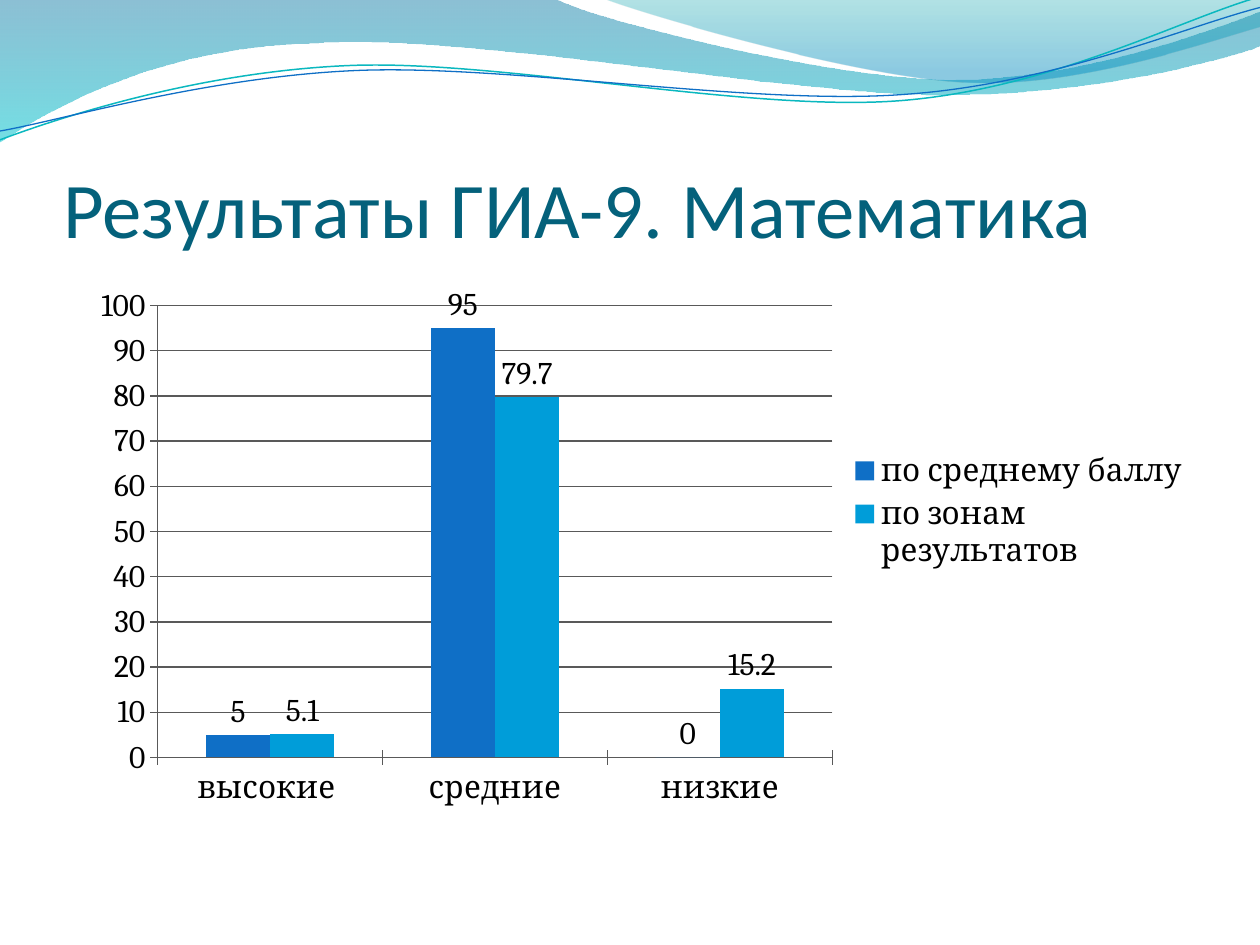
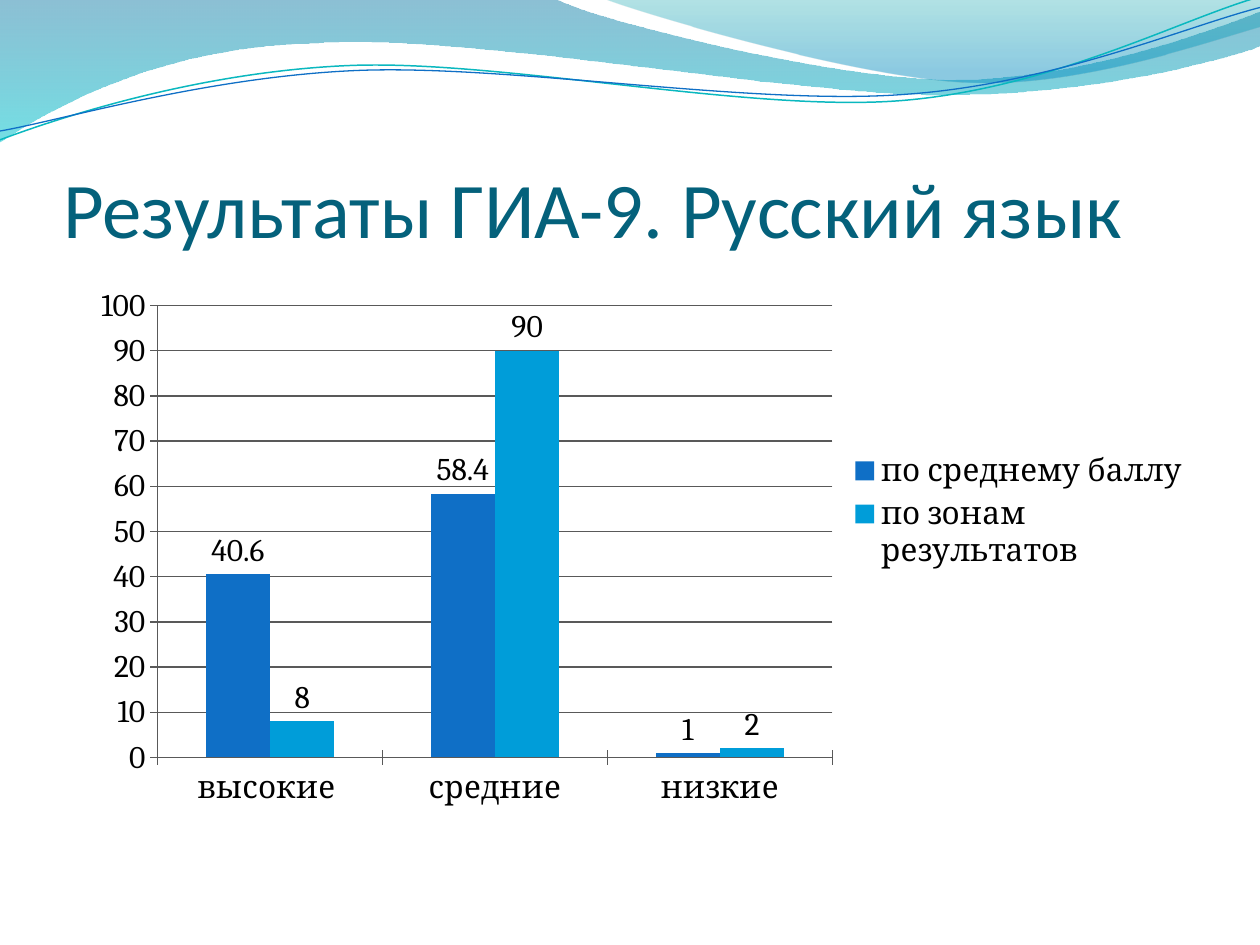
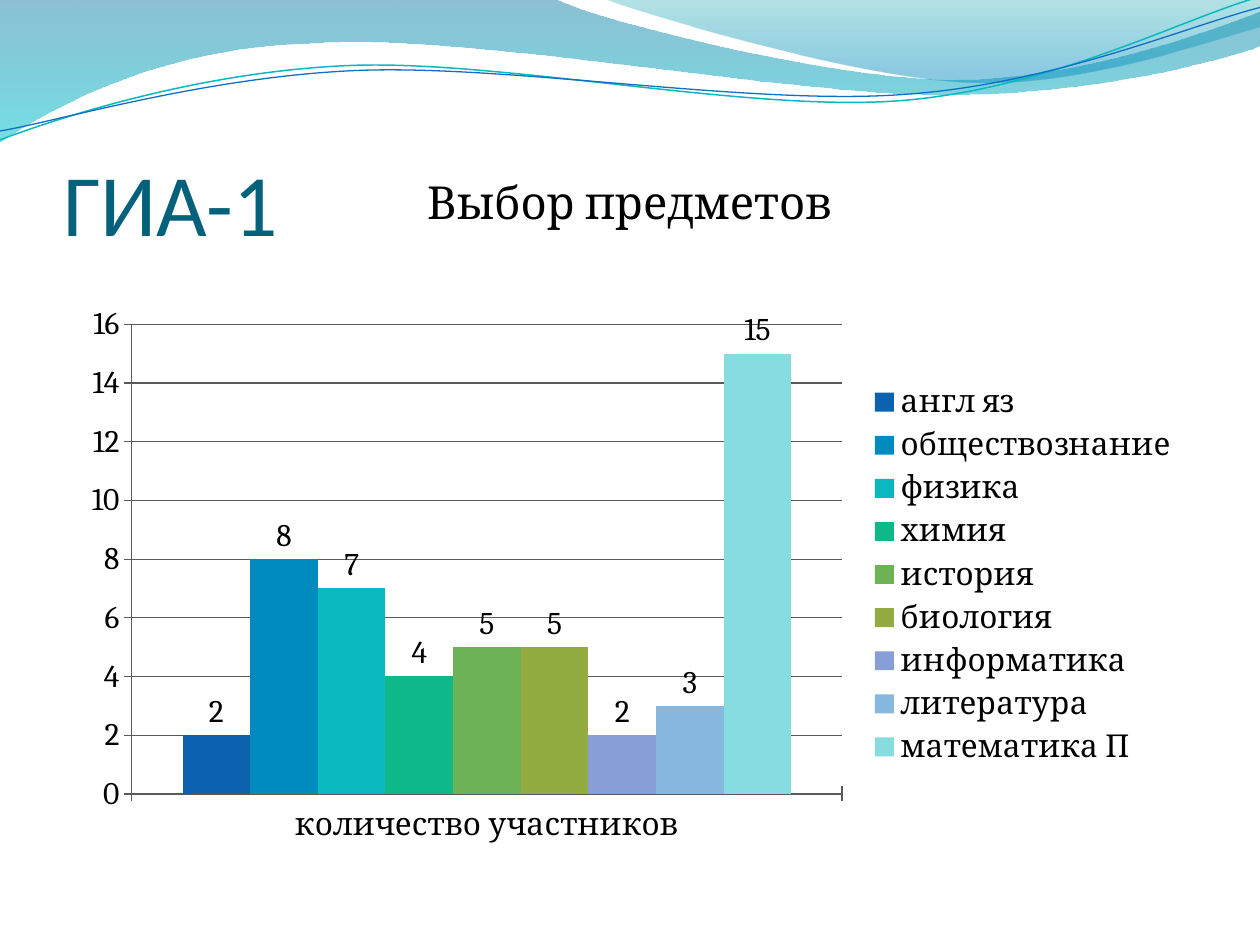
from math import cos, radians, sin

from lxml import etree
from pptx import Presentation
from pptx.chart.data import CategoryChartData
from pptx.dml.color import RGBColor
from pptx.enum.chart import (
    XL_CHART_TYPE, XL_LABEL_POSITION, XL_LEGEND_POSITION, XL_TICK_MARK)
from pptx.enum.text import MSO_ANCHOR, MSO_AUTO_SIZE, PP_ALIGN
from pptx.oxml.ns import qn
from pptx.util import Inches, Pt

COLUMNS = XL_CHART_TYPE.COLUMN_CLUSTERED
OUTSIDE_END = XL_LABEL_POSITION.OUTSIDE_END
LEGEND_RIGHT = XL_LEGEND_POSITION.RIGHT
CROSS = XL_TICK_MARK.CROSS
BOTTOM = MSO_ANCHOR.BOTTOM
NO_AUTOFIT = MSO_AUTO_SIZE.NONE
LEFT, CENTER = PP_ALIGN.LEFT, PP_ALIGN.CENTER

TITLE_FONT, BODY_FONT = "Calibri", "Cambria"
TITLE_COLOR, TEXT_COLOR, GRID_COLOR = "04617B", "000000", "595959"
BLUE, SKY = "0F6FC6", "009DD9"
SUBJECT_COLORS = ["0C62AE", "008BBF", "0AB8BF", "0EB889", "6EB257",
                  "92AC41", "879ED6", "87B8E0", "87DCE0"]

# Outlines: a point is a straight step, three points are a Bézier curve.
LEFT_WAVE = [
    (0, 0), (4.4, -0.01),
    ((4.76, 0.17), (6.64, 0.63), (7.58, 0.63)),
    ((8.53, 0.63), (9.58, 0.26), (10, 0.09)),
    (10.01, 0.36),
    ((9.83, 0.44), (8.7, 0.76), (7.46, 0.75)),
    ((6.22, 0.75), (3.82, 0.28), (2.57, 0.34)),
    ((1.29, 0.36), (0.46, 0.83), (-0.01, 1.13)),
    (0, 0),
]
RIGHT_WAVE = [
    (4.79, -0.01),
    ((5.09, 0.11), (6.82, 0.62), (7.69, 0.65)),
    ((8.56, 0.69), (9.61, 0.32), (10, 0.21)),
    (10, 0), (4.79, -0.01),
]
TEAL_CURVE = [
    (0, 1.11),
    ((0.48, 0.93), (1.58, 0.57), (2.77, 0.52)),
    ((3.95, 0.47), (5.93, 0.89), (7.13, 0.8)),
    ((8.33, 0.71), (9.38, 0.15), (9.98, -0.02)),
]
BLUE_CURVE = [
    (0, 1.04),
    ((0.47, 0.96), (1.64, 0.61), (2.83, 0.56)),
    ((4.03, 0.51), (5.97, 0.84), (7.17, 0.75)),
    ((8.36, 0.67), (9.41, 0.21), (10, 0.06)),
]
CURVE_TILT = 2.7

ZONES = ["высокие ", "средние", "низкие"]
ZONE_CHART_BOX = (0.55, 1.41, 9, 5.29)
ZONE_PLOT = {"x": 0.078, "y": 0.192, "w": 0.595, "h": 0.678}
ZONE_SLIDES = [
    ("Результаты ГИА-9. Математика", [5, 95, 0], [5.1, 79.7, 15.2]),
    ("Результаты ГИА-9. Русский язык", [40.6, 58.4, 1], [8, 90, 2]),
]
SUBJECTS = [
    ("англ яз", 2), ("обществознание", 8), ("физика", 7), ("химия", 4),
    ("история", 5), ("биология", 5), ("информатика", 2),
    ("литература", 3), ("математика П", 15),
]


def rgb(color):
    return RGBColor.from_string(color)


def style_font(font, name, size, color):
    font.name = name
    font.size = Pt(size)
    font.color.rgb = rgb(color)


def place(shape, left, top, width, height):
    shape.left, shape.top = Inches(left), Inches(top)
    shape.width, shape.height = Inches(width), Inches(height)


def is_curve(step):
    return isinstance(step[0], tuple)


def turn(point, center, degrees):
    x, y = point[0] - center[0], point[1] - center[1]
    cosine, sine = cos(radians(degrees)), sin(radians(degrees))
    return center[0] + x * cosine - y * sine, center[1] + x * sine + y * cosine


def add_outline(shapes, outline, closed, center=(0, 0), tilt=0):
    """Draw an outline, stored level and tilted back by the shape's rotation."""
    points = []
    for step in outline:
        points.extend(step if is_curve(step) else [step])
    points = [tuple(map(Inches, turn(point, center, tilt))) for point in points]
    builder = shapes.build_freeform(*points[0])
    builder.add_line_segments(points[1:], close=closed)
    shape = builder.convert_to_shape()
    shape.shadow.inherit = False
    shape.rotation = -tilt
    join_curves(shape, outline)
    return shape


def join_curves(shape, outline):
    """Merge the three straight steps of every curve into one Bézier segment."""
    trace = shape.element.find(".//" + qn("a:path"))
    segments = iter(trace.findall(qn("a:lnTo")))
    for step in outline[1:]:
        segment = next(segments)
        if is_curve(step):
            segment.tag = qn("a:cubicBezTo")
            for _ in range(2):
                extra = next(segments)
                segment.append(extra[0])
                trace.remove(extra)


def add_wave(shapes, outline, stops):
    """Add a vertical gradient area; a stop is (position, colour, opacity in percent)."""
    shape = add_outline(shapes, outline, True)
    shape.line.fill.background()
    shape.fill.gradient()
    shape.fill.gradient_angle = 270
    elements = shape.element.iter(qn("a:gs"))
    for stop, element, (position, color, opacity) in zip(
            shape.fill.gradient_stops, elements, stops):
        stop.position = position
        stop.color.rgb = rgb(color)
        etree.SubElement(element[0], qn("a:alpha"), val=str(opacity * 1000))
    return shape


def add_curve(shapes, outline, center, color, width):
    shape = add_outline(shapes, outline, False, center, CURVE_TILT)
    shape.fill.background()
    shape.line.color.rgb = rgb(color)
    shape.line.width = Pt(width)


def add_master_waves(deck, page):
    """Draw the waves with a page's builder and move them behind the master's placeholders."""
    left = add_wave(page.shapes, LEFT_WAVE, [(0, "0074A1", 45), (1, "00C6CF", 55)])
    right = add_wave(page.shapes, RIGHT_WAVE, [(0, "00A1A9", 30), (0.8, "008BBF", 45)])
    curves = page.shapes.add_group_shape()
    add_curve(curves.shapes, TEAL_CURVE, (4.99, 0.57), "0AB8BF", 0.85)
    add_curve(curves.shapes, BLUE_CURVE, (5, 0.59), BLUE, 0.75)
    tree = deck.slide_master.shapes.element
    for index, wave in enumerate((left, right, curves)):
        for number, properties in enumerate(wave.element.iter(qn("p:cNvPr"))):
            properties.set("id", str(20 + 10 * index + number))
        tree.insert(2 + index, wave.element)


def set_title(page, text, size):
    title = page.shapes.title
    place(title, 0.5, 0.77, 9, 1.25)
    frame = title.text_frame
    frame.text = text
    frame.auto_size = NO_AUTOFIT
    frame.vertical_anchor = BOTTOM
    frame.margin_left = frame.margin_right = frame.margin_bottom = 0
    frame.margin_top = Inches(0.05)
    para = frame.paragraphs[0]
    para.alignment = LEFT
    style_font(para.runs[0].font, TITLE_FONT, size, TITLE_COLOR)


def set_subtitle(page, text):
    body = page.placeholders[1]
    place(body, 0.5, 1.33, 9, 5.37)
    body.text_frame.text = text
    body.text_frame.auto_size = NO_AUTOFIT
    para = body.text_frame.paragraphs[0]
    para.alignment = CENTER
    style_font(para.runs[0].font, BODY_FONT, 26, TEXT_COLOR)
    properties = para._p.get_or_add_pPr()
    properties.set("marL", str(Inches(0.3)))
    properties.set("indent", str(Inches(-0.3)))
    etree.SubElement(properties, qn("a:buNone"))


def set_plot_layout(chart, layout):
    """Fix the inner plot area, in fractions of the chart."""
    plot_area = chart.element.find(".//" + qn("c:plotArea"))
    for old in plot_area.findall(qn("c:layout")):
        plot_area.remove(old)
    element = etree.Element(qn("c:layout"))
    manual = etree.SubElement(element, qn("c:manualLayout"))
    values = {"layoutTarget": "inner", "xMode": "edge", "yMode": "edge", **layout}
    for name, value in values.items():
        etree.SubElement(manual, qn("c:" + name), val=str(value))
    plot_area.insert(0, element)


def add_column_chart(page, box, categories, series, colors, maximum, unit):
    data = CategoryChartData()
    data.categories = categories
    for name, values in series:
        data.add_series(name, values)
    chart = page.shapes.add_chart(COLUMNS, *map(Inches, box), data).chart
    style_font(chart.font, BODY_FONT, 18, TEXT_COLOR)
    chart.has_title = False
    chart.has_legend = True
    chart.legend.position = LEGEND_RIGHT
    chart.legend.include_in_layout = False

    plot = chart.plots[0]
    plot.vary_by_categories = False
    plot.gap_width, plot.overlap = 150, 0
    plot.has_data_labels = True
    plot.data_labels.show_value = True
    plot.data_labels.position = OUTSIDE_END
    for column, color in zip(plot.series, colors):
        column.format.fill.solid()
        column.format.fill.fore_color.rgb = rgb(color)

    axis = chart.value_axis
    axis.minimum_scale, axis.maximum_scale, axis.major_unit = 0, maximum, unit
    axis.has_major_gridlines = True
    axis.major_tick_mark = chart.category_axis.major_tick_mark = CROSS
    for part in (axis, axis.major_gridlines, chart.category_axis):
        part.format.line.color.rgb = rgb(GRID_COLOR)
        part.format.line.width = Pt(0.75)
    return chart


def add_zone_slide(deck, title, by_score, by_zone):
    page = deck.slides.add_slide(deck.slide_layouts.get_by_name("Title Only"))
    set_title(page, title, 45)
    series = [("по среднему баллу", by_score), ("по зонам результатов ", by_zone)]
    chart = add_column_chart(page, ZONE_CHART_BOX, ZONES, series, [BLUE, SKY], 100, 10)
    set_plot_layout(chart, ZONE_PLOT)


def add_subject_slide(deck):
    page = deck.slides.add_slide(deck.slide_layouts.get_by_name("Title and Content"))
    set_title(page, "ГИА-1", 50)
    set_subtitle(page, "Выбор предметов")
    series = [(subject, [count]) for subject, count in SUBJECTS]
    add_column_chart(page, (0.55, 2.34, 8.91, 4.44), ["количество участников"],
                     series, SUBJECT_COLORS, 16, 2)


def main():
    deck = Presentation()
    deck.slide_width, deck.slide_height = Inches(10), Inches(7.5)
    for title, by_score, by_zone in ZONE_SLIDES:
        add_zone_slide(deck, title, by_score, by_zone)
    add_subject_slide(deck)
    add_master_waves(deck, deck.slides[0])
    deck.save("out.pptx")


if __name__ == "__main__":
    main()
